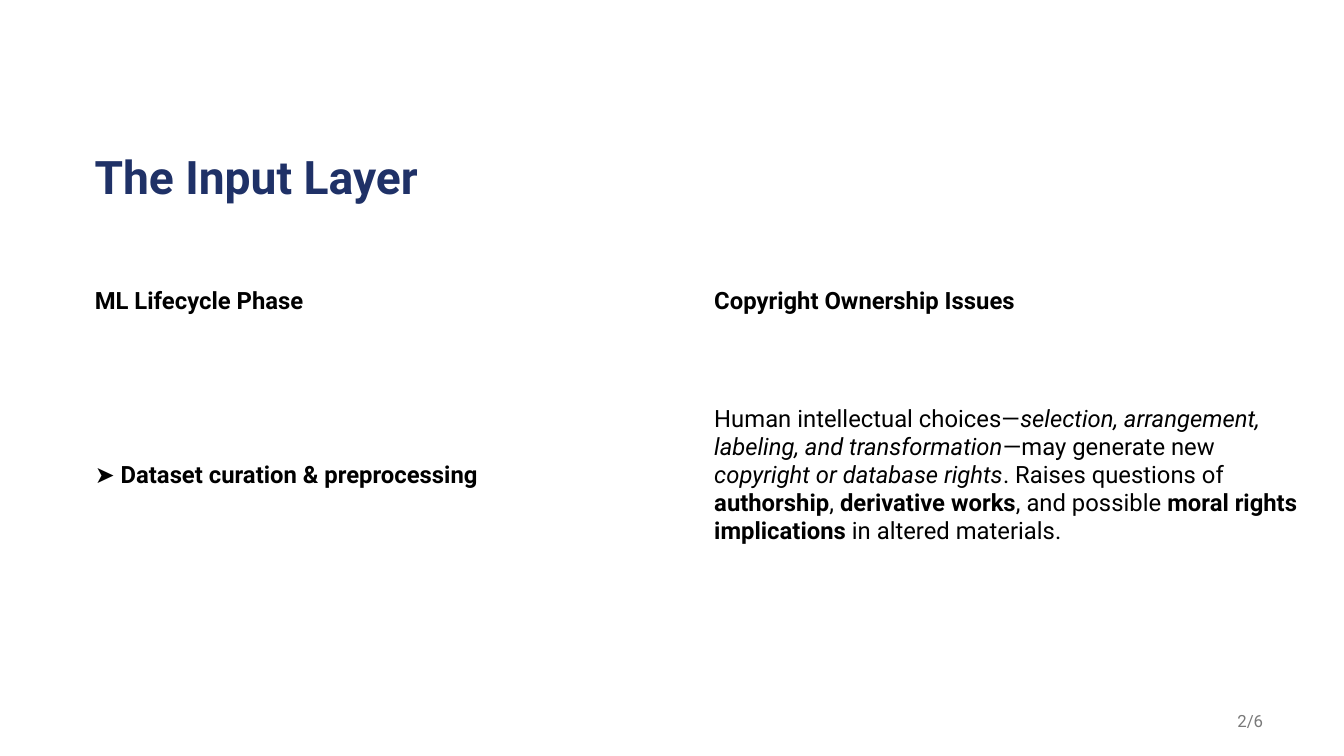
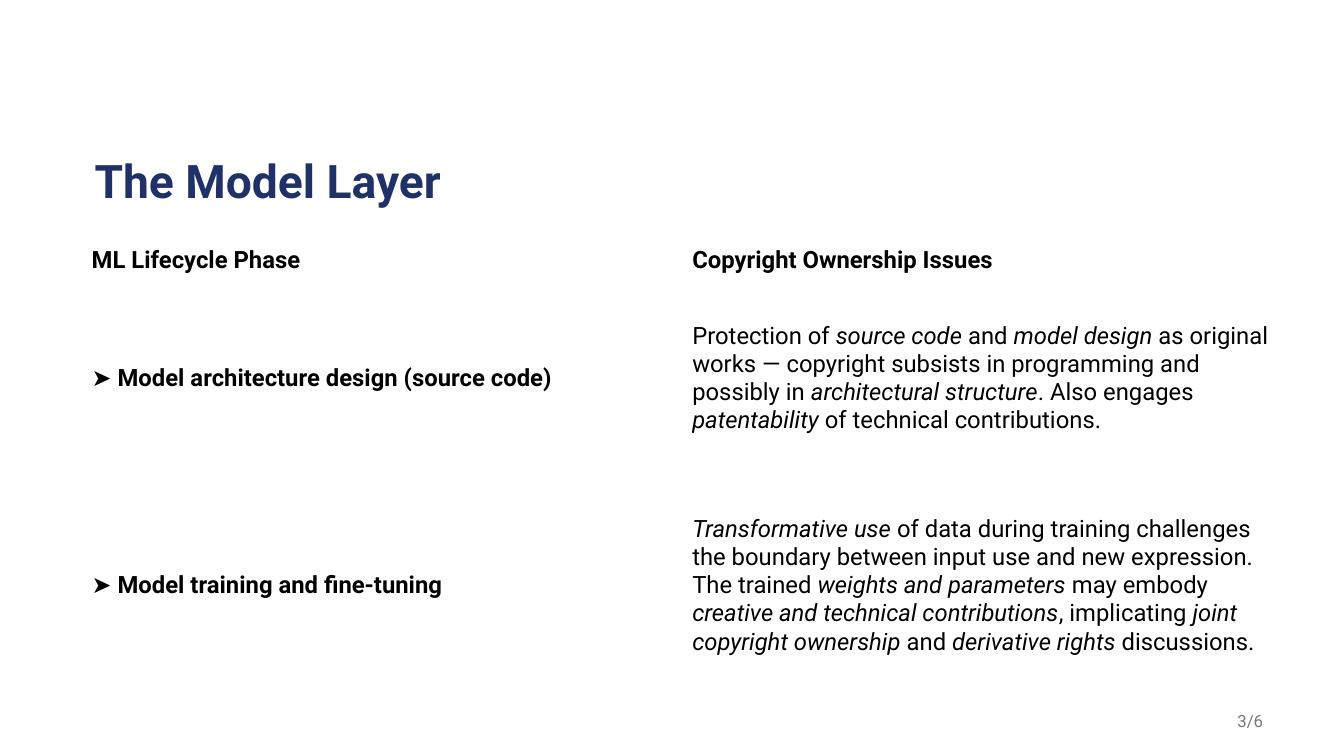
from dataclasses import dataclass

from pptx import Presentation
from pptx.dml.color import RGBColor
from pptx.enum.text import MSO_ANCHOR, PP_ALIGN
from pptx.util import Pt

MIDDLE = MSO_ANCHOR.MIDDLE
LEFT, RIGHT = PP_ALIGN.LEFT, PP_ALIGN.RIGHT
PLAIN, BOLD, ITALIC = {}, {"bold": True}, {"italic": True}


@dataclass(frozen=True)
class Theme:
    font: str = "Roboto"
    navy: RGBColor = RGBColor(0x1F, 0x31, 0x67)
    black: RGBColor = RGBColor(0, 0, 0)
    grey: RGBColor = RGBColor(0x79, 0x79, 0x79)
    title_size: int = 33
    body_size: int = 17
    number_size: int = 12
    margin: float = 60.5
    title_width: float = 858
    title_height: float = 104.4


class LayerDeck:
    def __init__(self, theme, page_total):
        self.theme = theme
        self.page_total = page_total
        self.deck = Presentation()
        self.deck.slide_width, self.deck.slide_height = Pt(960), Pt(540)
        self.page = None

    def add_page(self, title, title_top, number):
        theme = self.theme
        self.page = self.deck.slides.add_slide(self.deck.slide_layouts[6])
        heading = self.add_text(
            theme.margin, title_top, theme.title_width, theme.title_height,
            title, LEFT, theme.title_size, theme.navy, BOLD)
        heading.line_spacing = 0.9
        self.add_text(
            693.4, 500.4, 216, 28.8, f"{number}/{self.page_total}",
            RIGHT, theme.number_size, theme.grey, PLAIN)

    def add_text(self, left, top, width, height, text, align, size, color, style):
        box = self.page.shapes.add_textbox(Pt(left), Pt(top), Pt(width), Pt(height))
        frame = box.text_frame
        frame.word_wrap = True
        frame.vertical_anchor = MIDDLE
        para = frame.paragraphs[0]
        para.alignment = align
        self.add_spans(para, [(text, style)], size, color)
        return para

    def add_spans(self, para, spans, size, color):
        for text, style in spans:
            span = para.add_run()
            span.text = text
            span.font.color.rgb = color
            formats = {"name": self.theme.font, "size": Pt(size),
                       "bold": False, "italic": False, **style}
            for name, value in formats.items():
                setattr(span.font, name, value)

    def add_phase_table(self, top, column_width, row_heights, padding, phases):
        rows = [([("ML Lifecycle Phase", BOLD)],
                 [("Copyright Ownership Issues", BOLD)])]
        rows += [([(f"➤ {phase}", BOLD)], issues) for phase, issues in phases]
        table = self.page.shapes.add_table(
            len(rows), 2, Pt(self.theme.margin), Pt(top),
            Pt(2 * column_width), Pt(sum(row_heights))).table
        table.first_row = table.horz_banding = False
        for column in table.columns:
            column.width = Pt(column_width)
        side, edge = padding
        cell_format = {"vertical_anchor": MIDDLE,
                       "margin_left": Pt(side), "margin_right": Pt(side),
                       "margin_top": Pt(edge), "margin_bottom": Pt(edge)}
        for row, height, contents in zip(table.rows, row_heights, rows):
            row.height = Pt(height)
            for cell, spans in zip(row.cells, contents):
                cell.fill.background()
                for name, value in cell_format.items():
                    setattr(cell, name, value)
                self.add_spans(cell.text_frame.paragraphs[0], spans,
                               self.theme.body_size, self.theme.black)


def main():
    layers = LayerDeck(Theme(), page_total=6)

    layers.add_page("The Input Layer", 76.3, 2)
    layers.add_phase_table(193.7, 442.5, [43.2, 205.2], (7.2, 3.6), [
        ("Dataset curation & preprocessing", [
            ("Human intellectual choices—", PLAIN),
            ("selection, arrangement, labeling, and transformation", ITALIC),
            ("—may generate new ", PLAIN),
            ("copyright or database rights", ITALIC),
            (". Raises questions of ", PLAIN),
            ("authorship", BOLD),
            (", ", PLAIN),
            ("derivative works", BOLD),
            (", and possible ", PLAIN),
            ("moral rights implications", BOLD),
            (" in altered materials.", PLAIN),
        ]),
    ])

    layers.add_page("The Model Layer", 79.2, 3)
    layers.add_phase_table(167.8, 429, [36, 132.5, 164.2], (5, 2.2), [
        ("Model architecture design (source code)", [
            ("Protection of ", PLAIN),
            ("source code", ITALIC),
            (" and ", PLAIN),
            ("model design", ITALIC),
            (" as original works — copyright subsists in programming"
             " and possibly in ", PLAIN),
            ("architectural structure", ITALIC),
            (". Also engages ", PLAIN),
            ("patentability", ITALIC),
            (" of technical contributions.", PLAIN),
        ]),
        ("Model training and fine-tuning", [
            ("Transformative use", ITALIC),
            (" of data during training challenges the boundary between"
             " input use and new expression. The trained ", PLAIN),
            ("weights and parameters", ITALIC),
            (" may embody ", PLAIN),
            ("creative and technical contributions", ITALIC),
            (", implicating ", PLAIN),
            ("joint copyright ownership", ITALIC),
            (" and ", PLAIN),
            ("derivative rights", ITALIC),
            (" discussions.", PLAIN),
        ]),
    ])

    layers.deck.save("out.pptx")


if __name__ == "__main__":
    main()
